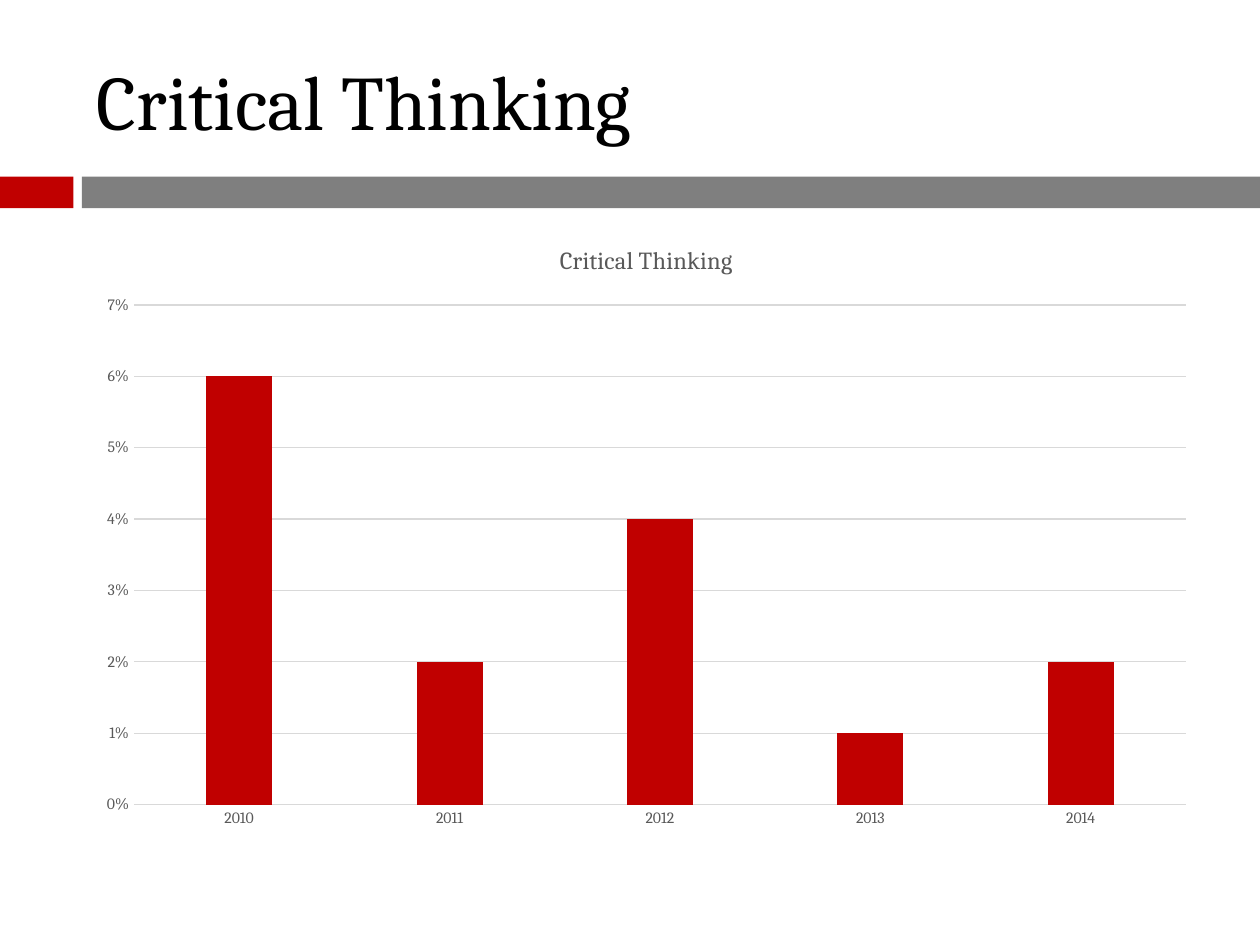
from pptx import Presentation
from pptx.chart.data import CategoryChartData
from pptx.dml.color import RGBColor
from pptx.enum.chart import XL_CHART_TYPE, XL_TICK_MARK
from pptx.enum.shapes import MSO_SHAPE
from pptx.enum.text import MSO_ANCHOR, PP_ALIGN
from pptx.util import Cm, Pt

COLUMNS = XL_CHART_TYPE.COLUMN_CLUSTERED
NO_TICK = XL_TICK_MARK.NONE
RECT = MSO_SHAPE.RECTANGLE
MIDDLE = MSO_ANCHOR.MIDDLE
LEFT = PP_ALIGN.LEFT

RED = RGBColor(0xC0, 0x00, 0x00)
GRAY = RGBColor(0x7F, 0x7F, 0x7F)
BLACK = RGBColor(0x00, 0x00, 0x00)
LABEL = RGBColor(0x59, 0x59, 0x59)
GRID = RGBColor(0xD9, 0xD9, 0xD9)
FONT = "Cambria"


def set_font(font, size, color):
    font.name = FONT
    font.size = Pt(size)
    font.bold = False
    font.color.rgb = color


prs = Presentation()
prs.slide_width, prs.slide_height = Cm(25.4), Cm(19.05)
s = prs.slides.add_slide(prs.slide_layouts[5])

# Two-part band under the title
for left, width, color in ((0, 1.48, RED), (1.65, 23.75, GRAY)):
    sp = s.shapes.add_shape(RECT, Cm(left), Cm(3.56), Cm(width), Cm(0.64))
    sp.shadow.inherit = False
    sp.fill.solid()
    sp.fill.fore_color.rgb = color
    sp.line.fill.background()

# Title
title = s.shapes.title
title.left, title.top, title.width, title.height = Cm(1.7), Cm(0.64), Cm(22.66), Cm(2.74)
tf = title.text_frame
tf.vertical_anchor = MIDDLE
p = tf.paragraphs[0]
p.alignment = LEFT
r = p.add_run()
r.text = "Critical Thinking"
set_font(r.font, 44, BLACK)

# Column chart
data = CategoryChartData(number_format="0%")
data.categories = ["2010", "2011", "2012", "2013", "2014"]
data.add_series("Critical Thinking", (0.06, 0.02, 0.04, 0.01, 0.02))
chart = s.shapes.add_chart(COLUMNS, Cm(1.7), Cm(4.45), Cm(22.66), Cm(12.49), data).chart
set_font(chart.font, 10, BLACK)
chart.has_legend = False
chart.has_title = True
r = chart.chart_title.text_frame.paragraphs[0].add_run()
r.text = "Critical Thinking"
set_font(r.font, 14, LABEL)
chart.chart_title.include_in_layout = False

plot = chart.plots[0]
plot.gap_width = 219
plot.overlap = -27
plot.vary_by_categories = False
fill = plot.series[0].format.fill
fill.solid()
fill.fore_color.rgb = RED

# Axes and gridlines
cat_axis, val_axis = chart.category_axis, chart.value_axis
for axis in (cat_axis, val_axis):
    axis.major_tick_mark = NO_TICK
    axis.minor_tick_mark = NO_TICK
    set_font(axis.tick_labels.font, 9, LABEL)
val_axis.has_major_gridlines = True
val_axis.minimum_scale, val_axis.maximum_scale = 0, 0.07
val_axis.major_unit = 0.01
val_axis.tick_labels.number_format = "0%"
val_axis.tick_labels.number_format_is_linked = False
val_axis.format.line.fill.background()
for line in (cat_axis.format.line, val_axis.major_gridlines.format.line):
    line.color.rgb = GRID
    line.width = Pt(0.75)

prs.save("out.pptx")
